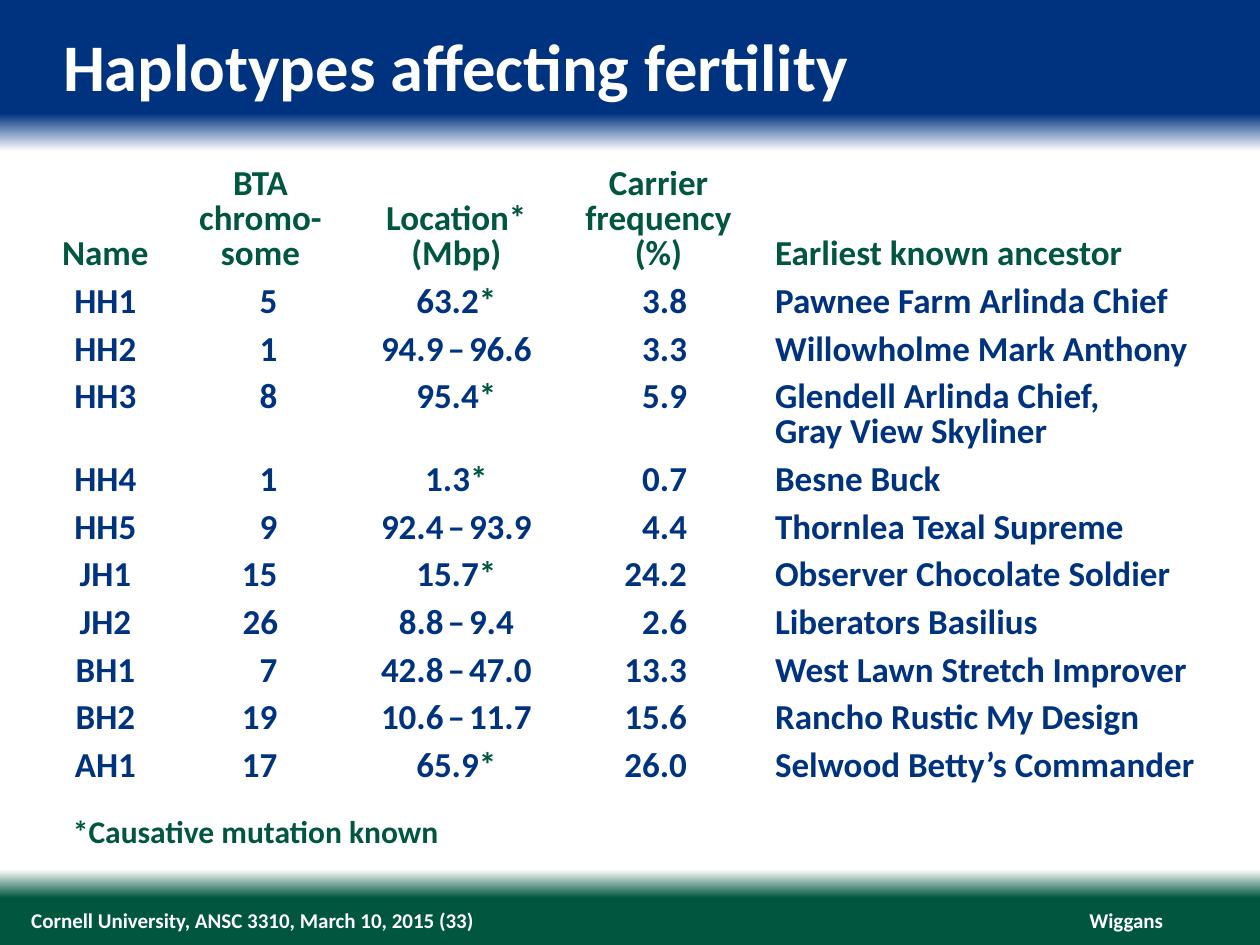
"""Build the slide on haplotypes that affect fertility."""
from dataclasses import dataclass

from pptx import Presentation
from pptx import oxml
from pptx import util as u
from pptx.dml import color as c
from pptx.enum import text as t
from pptx.oxml import ns


@dataclass(frozen=True)
class Theme:
    font: str = "Calibri"
    blue: str = "00337F"
    green: str = "00563F"
    white: str = "FFFFFF"
    title: int = 38
    body: int = 20
    note: int = 18
    foot: int = 12
    gap: int = 10


THEME = Theme()
LEFT, MID, RIGHT = t.PP_ALIGN.LEFT, t.PP_ALIGN.CENTER, t.PP_ALIGN.RIGHT
STOPS = [(0, THEME.blue), (12, THEME.blue), (16, THEME.white),
         (92, THEME.white), (95, THEME.green), (100, THEME.green)]
WIDTHS = [2.31, 3.94, 3.96, 4.19, 9.17]
HEAD_TALL, LINE_TALL, PAD = 2.24, 0.71, 0.25
HEADS = ["Name", "BTA\nchromo-\nsome", "Location*\n(Mbp)",
         "Carrier\nfrequency\n(%)", "Earliest known ancestor"]
ROWS = [
    ("HH1", "\t5", "63.2*", "3.8", "Pawnee Farm Arlinda Chief"),
    ("HH2", "\t1", "94.9–96.6", "3.3", "Willowholme Mark Anthony"),
    ("HH3", "\t8", "95.4*", "5.9", "Glendell Arlinda Chief,\nGray View Skyliner"),
    ("HH4", "\t1", "1.3*", "0.7", "Besne Buck"),
    ("HH5", "\t9", "92.4–93.9", "4.4", "Thornlea Texal Supreme"),
    ("JH1", "\t15", "15.7*", "24.2", "Observer Chocolate Soldier"),
    ("JH2", "26", "8.8–9.4", "2.6", "Liberators Basilius"),
    ("BH1", "\t7", "42.8–47.0", "13.3", "West Lawn Stretch Improver"),
    ("BH2", "\t19", "10.6–11.7", "15.6", "Rancho Rustic My Design"),
    ("AH1", "\t17", "65.9*", "26.0", "Selwood Betty’s Commander"),
]


def put(item, vals):
    """Set each named value on an object."""
    for name, val in vals.items():
        setattr(item, name, val)


def add_run(para, words, size, tint):
    """Add one bold run to a paragraph."""
    run = para.add_run()
    run.text = words
    put(run.font, {"name": THEME.font, "size": u.Pt(size), "bold": True})
    run.font.color.rgb = c.RGBColor.from_string(tint)


def add_tab(para, place):
    """Give a paragraph one right tab stop."""
    tabs = oxml.parse_xml(
        f'<a:tabLst {ns.nsdecls("a")}><a:tab pos="{u.Cm(place)}" algn="r"/></a:tabLst>')
    para._p.get_or_add_pPr().append(tabs)


def paint_back(slide):
    """Fill the slide with bands that fade at top and foot."""
    fill = slide.background.fill
    fill.gradient()
    fill.gradient_angle = 270
    stops = next(slide._element.iter(ns.qn("a:gsLst")))
    for stop in list(stops):
        stops.remove(stop)
    for place, tint in STOPS:
        stops.append(oxml.parse_xml(
            f'<a:gs {ns.nsdecls("a")} pos="{place * 1000}">'
            f'<a:srgbClr val="{tint}"/></a:gs>'))


def set_text(shape, area, words, size, tint, inset=(0, 0), **form):
    """Place a shape and write its one line of text."""
    names = ("left", "top", "width", "height")
    put(shape, {name: u.Cm(val) for name, val in zip(names, area)})
    frame = shape.text_frame
    side, edge = map(u.Cm, inset)
    base = {"word_wrap": True, "vertical_anchor": t.MSO_ANCHOR.MIDDLE,
            "auto_size": t.MSO_AUTO_SIZE.SHAPE_TO_FIT_TEXT,
            "margin_left": side, "margin_right": side,
            "margin_top": edge, "margin_bottom": edge}
    align = form.pop("align", LEFT)
    put(frame, {**base, **form})
    para = frame.paragraphs[0]
    para.alignment = align
    add_run(para, words, size, tint)


def add_box(slide, area, *args, **form):
    """Add a text box with one line of text."""
    box = slide.shapes.add_textbox(*map(u.Cm, area))
    set_text(box, area, *args, **form)


def split_runs(words, tint):
    """Part a line into runs: thin gaps by a dash, a green star."""
    size = THEME.body
    if "–" in words:
        low, high = words.split("–")
        gap = (" ", THEME.gap, tint)
        return [(low, size, tint), gap, ("–", size, tint), gap, (high, size, tint)]
    if words.endswith("*"):
        return [(words[:-1], size, tint), ("*", size, THEME.green)]
    return [(words, size, tint)]


def fill_cell(cell, words, tint, align, form):
    """Write the lines of one clear table cell."""
    cell.fill.background()
    put(cell, form)
    frame = cell.text_frame
    for num, line in enumerate(words.split("\n")):
        para = frame.add_paragraph() if num else frame.paragraphs[0]
        put(para, {"alignment": align, "line_spacing": u.Pt(THEME.body)})
        if line.startswith("\t"):
            para.alignment = LEFT
            add_tab(para, 2.06)
        for run in split_runs(line, tint):
            add_run(para, *run)


def add_grid(slide):
    """Add the table of haplotypes."""
    talls = [HEAD_TALL] + [
        PAD + LINE_TALL * (1 + row[-1].count("\n")) for row in ROWS]
    grid = slide.shapes.add_table(
        len(talls), len(WIDTHS), u.Cm(0.97), u.Cm(3.43),
        u.Cm(sum(WIDTHS)), u.Cm(sum(talls))).table
    put(grid, {"first_row": False, "horz_banding": False})
    for col, width in zip(grid.columns, WIDTHS):
        col.width = u.Cm(width)
    for row, tall in zip(grid.rows, talls):
        row.height = u.Cm(tall)
    head = {"margin_top": 0, "vertical_anchor": t.MSO_ANCHOR.BOTTOM}
    for num, words in enumerate(HEADS):
        align = LEFT if num == 4 else MID
        fill_cell(grid.cell(0, num), words, THEME.green, align, head)
    sides = [MID, MID, MID, RIGHT, LEFT]
    forms = [{}, {}, {}, {"margin_right": u.Cm(1.52)}, {}]
    for num, row in enumerate(ROWS, 1):
        for col, (words, side, form) in enumerate(zip(row, sides, forms)):
            fill_cell(grid.cell(num, col), words, THEME.blue, side, form)


def main():
    """Build and save the slide."""
    deck = Presentation()
    put(deck, {"slide_width": u.Cm(25.4), "slide_height": u.Cm(19.05)})
    slide = deck.slides.add_slide(deck.slide_layouts[5])
    paint_back(slide)
    set_text(slide.shapes.title, (1.27, 0.5, 22.86, 1.63),
             "Haplotypes affecting fertility", THEME.title, THEME.white,
             vertical_anchor=t.MSO_ANCHOR.TOP)
    add_grid(slide)
    add_box(slide, (1.22, 16.24, 7.95, 1.02), "*Causative mutation known",
            THEME.note, THEME.green, inset=(0.25, 0.13), word_wrap=False)
    add_box(slide, (0.63, 18.29, 18.85, 0.51),
            "Cornell University, ANSC 3310, March 10, 2015 (33)",
            THEME.foot, THEME.white)
    add_box(slide, (21.95, 18.29, 1.5, 0.51), "Wiggans",
            THEME.foot, THEME.white, word_wrap=False, align=RIGHT)
    deck.save("out.pptx")


if __name__ == "__main__":
    main()
